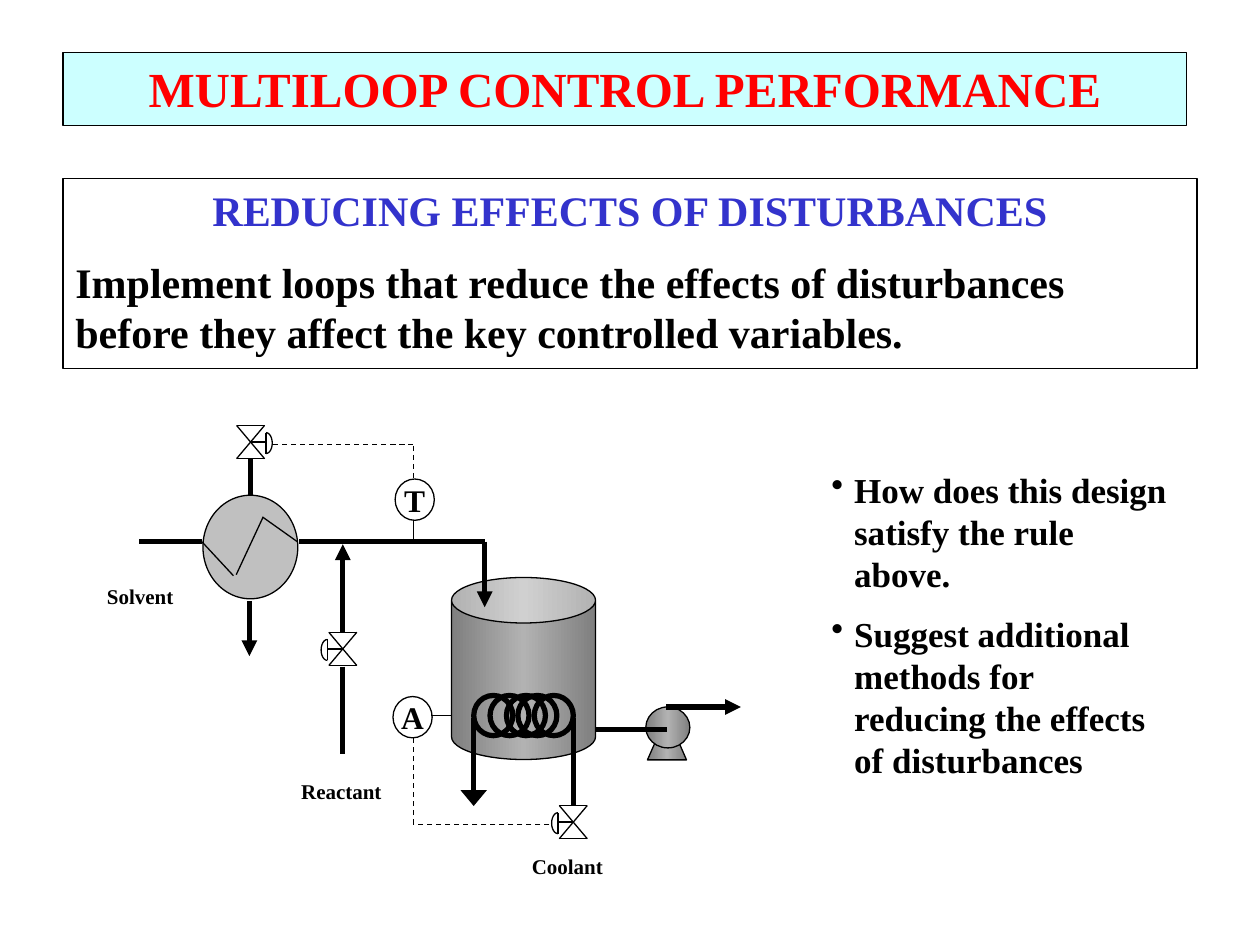
from copy import deepcopy
from math import cos, pi, sin

from lxml import etree
from pptx import Presentation
from pptx.dml.color import RGBColor
from pptx.enum.dml import MSO_LINE
from pptx.enum.shapes import MSO_CONNECTOR, MSO_SHAPE
from pptx.enum.text import MSO_ANCHOR, MSO_AUTO_SIZE, PP_ALIGN
from pptx.oxml.ns import qn
from pptx.util import Pt

RECTANGLE = MSO_SHAPE.RECTANGLE
CAN = MSO_SHAPE.CAN
ELLIPSE = MSO_SHAPE.OVAL
COIL_LOOP = MSO_SHAPE.FLOWCHART_CONNECTOR
PUMP_BASE = MSO_SHAPE.FLOWCHART_MANUAL_OPERATION
STRAIGHT = MSO_CONNECTOR.STRAIGHT
DASH = MSO_LINE.DASH
CENTER = PP_ALIGN.CENTER
LEFT = PP_ALIGN.LEFT
MIDDLE = MSO_ANCHOR.MIDDLE
TOP = MSO_ANCHOR.TOP
GROW = MSO_AUTO_SIZE.SHAPE_TO_FIT_TEXT
FIXED = MSO_AUTO_SIZE.NONE

BLACK = RGBColor(0x00, 0x00, 0x00)
RED = RGBColor(0xFF, 0x00, 0x00)
BLUE = RGBColor(0x33, 0x33, 0xCC)
PALE_CYAN = RGBColor(0xCC, 0xFF, 0xFF)
SILVER = RGBColor(0xC0, 0xC0, 0xC0)
STEEL_DARK = RGBColor(0x7F, 0x7F, 0x7F)
STEEL_LIGHT = RGBColor(0xB2, 0xB2, 0xB2)
STEEL = (STEEL_DARK, STEEL_LIGHT, STEEL_DARK)

THIN = 0.75
PIPE = 3


class Flowsheet:
    def __init__(self, slide):
        self.slide = slide
        self.font = {"name": "Times New Roman", "bold": True}
        self.bullet_indent = 13

    def apply(self, target, values):
        for name, value in values.items():
            setattr(target, name, value)

    def outline(self, shape, width):
        shape.shadow.inherit = False
        shape.line.color.rgb = BLACK
        shape.line.width = Pt(width)

    def shape(self, kind, x, y, w, h, fill=None, width=THIN):
        shape = self.slide.shapes.add_shape(kind, Pt(x), Pt(y), Pt(w), Pt(h))
        self.outline(shape, width)
        if fill is None:
            shape.fill.background()
        elif fill is STEEL:
            self.gradient(shape, fill)
        else:
            shape.fill.solid()
            shape.fill.fore_color.rgb = fill
        return shape

    def gradient(self, shape, colors):
        shape.fill.gradient()
        shape.fill.gradient_angle = 0
        first = shape._element.spPr.find(".//" + qn("a:gs"))
        first.addnext(deepcopy(first))
        for stop, color, position in zip(shape.fill.gradient_stops, colors, (0, 0.5, 1)):
            stop.color.rgb = color
            stop.position = position

    def fill_text(self, shape, paragraphs, size, bullets=False, **layout):
        frame = shape.text_frame
        self.apply(frame, {"word_wrap": True, "auto_size": GROW,
                           "vertical_anchor": TOP, **layout})
        for index, (text, color, alignment) in enumerate(paragraphs):
            paragraph = frame.add_paragraph() if index else frame.paragraphs[0]
            paragraph.alignment = alignment
            paragraph.space_before = Pt(size / 2 if index else 0)
            if bullets:
                self.bullet(paragraph)
            run = paragraph.add_run()
            run.text = text
            self.apply(run.font, {**self.font, "size": Pt(size)})
            run.font.color.rgb = color

    def bullet(self, paragraph):
        properties = paragraph._p.get_or_add_pPr()
        properties.set("marL", str(Pt(self.bullet_indent)))
        properties.set("indent", str(-Pt(self.bullet_indent)))
        etree.SubElement(properties, qn("a:buChar"), char="•")

    def label(self, x, y, w, h, paragraphs, size, bullets=False):
        box = self.slide.shapes.add_textbox(Pt(x), Pt(y), Pt(w), Pt(h))
        self.fill_text(box, paragraphs, size, bullets)

    def instrument(self, letter, x, y):
        circle = self.shape(ELLIPSE, x, y, 22.4, 23.6)
        self.fill_text(circle, [(letter, BLACK, CENTER)], 18,
                       word_wrap=False, auto_size=FIXED, vertical_anchor=MIDDLE)

    def line(self, x1, y1, x2, y2, width=THIN, dash=None, arrow=None, parent=None):
        shapes = (parent or self.slide).shapes
        connector = shapes.add_connector(STRAIGHT, Pt(x1), Pt(y1), Pt(x2), Pt(y2))
        connector.line.color.rgb = BLACK
        self.apply(connector.line, {"width": Pt(width), "dash_style": dash})
        if arrow:
            etree.SubElement(connector.line._get_or_add_ln(), qn("a:tailEnd"),
                             type="triangle", w=arrow)
        etree.SubElement(connector._element.spPr, qn("a:effectLst"))

    def pipe(self, x1, y1, x2, y2, arrow=None):
        self.line(x1, y1, x2, y2, PIPE, arrow=arrow)

    def valve(self, x, y, side):
        valve = self.slide.shapes.add_group_shape()
        half_width, half_height, bonnet_half = 8, 9.5, 6
        left, right = x - half_width, x + half_width
        top, bottom = y - half_height, y + half_height
        bonnet_x, bonnet_y = x + side * 8.8, y + 0.6
        for ends in (
            (left, top, right, top),
            (left, bottom, right, bottom),
            (left, top, right, bottom),
            (right, top, left, bottom),
            (x, y, bonnet_x, y),
            (bonnet_x, bonnet_y - bonnet_half, bonnet_x, bonnet_y + bonnet_half),
        ):
            self.line(*ends, parent=valve)
        angles = [pi * (step / 12 - 0.5) for step in range(13)]
        arc = [(Pt(bonnet_x + side * 3.6 * cos(a)), Pt(bonnet_y + bonnet_half * sin(a)))
               for a in angles]
        builder = valve.shapes.build_freeform(*arc[0])
        builder.add_line_segments(arc[1:], close=False)
        bonnet = builder.convert_to_shape()
        self.outline(bonnet, THIN)
        bonnet.fill.background()


def main():
    deck = Presentation()
    deck.slide_width, deck.slide_height = Pt(720), Pt(540)
    sheet = Flowsheet(deck.slides.add_slide(deck.slide_layouts[6]))

    title = sheet.shape(RECTANGLE, 36, 30, 642, 41.8, PALE_CYAN)
    sheet.fill_text(title, [("MULTILOOP CONTROL PERFORMANCE", RED, CENTER)], 28)
    rule = sheet.shape(RECTANGLE, 36, 102, 648, 108.7)
    sheet.fill_text(rule, [
        ("REDUCING EFFECTS OF DISTURBANCES", BLUE, CENTER),
        ("Implement loops that reduce the effects of disturbances before they "
         "affect the key controlled variables.", BLACK, LEFT),
    ], 24)

    reactor = sheet.shape(CAN, 258, 330, 82.3, 104, STEEL)
    reactor.adjustments[0] = 0.316
    pump_base = sheet.shape(PUMP_BASE, 370, 424, 22.3, 10.2, STEEL)
    pump_base.rotation = 180
    for loop_x in (280, 270.7, 289.4, 295.9, 305.3):
        sheet.shape(COIL_LOOP, loop_x, 397.4, 22.3, 23, width=PIPE)
    sheet.pipe(270.7, 410.4, 270.7, 460.6, "lg")
    sheet.pipe(327.6, 410.4, 327.6, 460.6)

    sheet.valve(195.9, 370.8, -1)
    sheet.shape(ELLIPSE, 369, 404, 25.2, 23.4, STEEL)
    sheet.pipe(381, 416.7, 340, 416.7)
    sheet.pipe(380.8, 404, 423.4, 404, "med")

    sheet.pipe(277, 309.5, 277, 347, "med")
    sheet.pipe(277, 309.5, 170.6, 309.5)
    sheet.instrument("T", 225.8, 273.7)
    sheet.instrument("A", 224.6, 398)
    sheet.line(246.5, 409, 258.4, 409)
    sheet.pipe(195.9, 381, 195.9, 431)
    sheet.pipe(195.9, 361.4, 195.9, 311, "med")
    sheet.valve(327.6, 469.8, -1)
    sheet.line(314, 471, 236.2, 471, dash=DASH)
    sheet.line(236.2, 471, 236.2, 421.4, dash=DASH)

    sheet.shape(ELLIPSE, 116, 283, 54.2, 59.2, SILVER)
    sheet.line(170, 309.6, 150, 295.4)
    sheet.line(150.4, 295.4, 135, 328.4)
    sheet.line(133.4, 329, 115.4, 309.6)
    sheet.pipe(115.4, 309.6, 79.4, 309.6)
    sheet.valve(143.2, 252.6, 1)
    sheet.pipe(143.2, 262, 143.2, 283.6)
    sheet.pipe(142.5, 343.4, 142.5, 375, "med")
    sheet.line(156, 254.2, 236.2, 254.2, dash=DASH)
    sheet.line(236.2, 254.8, 236.2, 273, dash=DASH)
    sheet.line(236.2, 297, 236.2, 309)

    for stream, x, y in (("Reactant", 165, 441.4), ("Solvent", 54, 330),
                         ("Coolant", 296.8, 484)):
        sheet.label(x, y, 66.2, 21.6, [(stream, BLACK, LEFT)], 12)
    sheet.label(468, 264.2, 210, 187.2, [
        ("How does this design satisfy the rule above.", BLACK, LEFT),
        ("Suggest additional methods for reducing the effects of disturbances",
         BLACK, LEFT),
    ], 20, bullets=True)

    deck.save("out.pptx")


if __name__ == "__main__":
    main()
